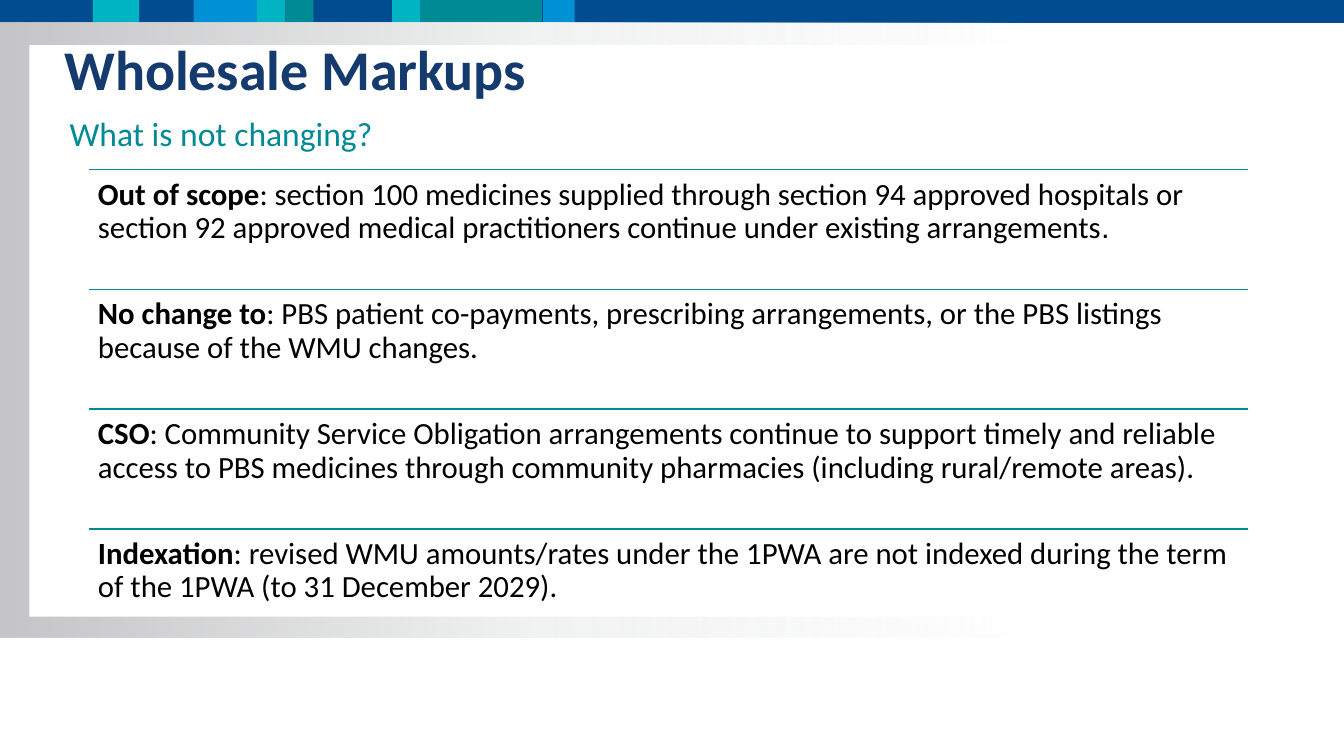
import pptx
import pptx.util
import pptx.dml.color
import pptx.enum.shapes
import pptx.enum.text
import pptx.oxml
import pptx.oxml.ns
from pptx.util import Cm, Pt

RGBColor = pptx.dml.color.RGBColor
NAVY = RGBColor(0x00, 0x4C, 0x91)
AQUA = RGBColor(0x00, 0xB4, 0xC4)
BLUE = RGBColor(0x00, 0x91, 0xD5)
GREEN = RGBColor(0x00, 0x8A, 0x96)
TEAL = RGBColor(0x00, 0x8A, 0x95)
TITLE_BLUE = RGBColor(0x15, 0x3A, 0x6E)
GREY = RGBColor(0xC4, 0xC4, 0xC6)
PALE = RGBColor(0xF1, 0xF2, 0xF2)
WHITE = RGBColor(0xFF, 0xFF, 0xFF)
BLACK = RGBColor(0x00, 0x00, 0x00)

TITLE = "Wholesale Markups"
QUESTION = "What is not changing?"
SECTIONS = [
    [("Out of scope", True, "Calibri"),
     (": section 100 medicines supplied through section 94 approved hospitals or "
      "section 92 approved medical practitioners continue under existing arrangements",
      False, "Calibri"),
     (".", False, "Arial")],
    [("No change to", True, "Calibri"),
     (": PBS patient co-payments, prescribing arrangements, or the PBS listings "
      "because of the WMU changes.", False, "Calibri")],
    [("CSO", True, "Calibri"),
     (": Community Service Obligation arrangements continue to support timely and reliable "
      "access to PBS medicines through community pharmacies (including rural/remote areas).",
      False, "Calibri")],
    [("Indexation", True, "Calibri"),
     (": revised WMU amounts/rates under the 1PWA are not indexed during the term "
      "of the 1PWA (to 31 December 2029).", False, "Calibri")],
]
SLIDE_WIDTH, SLIDE_HEIGHT = 33.87, 19.05
BAND_HEIGHT = 0.58
BAND = [
    (0, SLIDE_WIDTH, NAVY), (2.34, 1.17, AQUA), (4.88, 1.63, BLUE),
    (6.48, 0.71, AQUA), (7.19, 0.71, GREEN), (9.88, 0.71, AQUA),
    (10.59, 3.07, GREEN), (13.69, 0.79, BLUE),
]
FADE_STOPS = [(0, GREY, 100), (52, PALE, 100), (100, PALE, 0)]
SECTION_LEFT, SECTION_TOP = 2.24, 4.27
SECTION_WIDTH, SECTION_HEIGHT = 29.21, 3.02
SECTION_INSET = Cm(0.23)


def add_block(slide, left, top, width, height, color):
    shape = slide.shapes.add_shape(pptx.enum.shapes.MSO_SHAPE.RECTANGLE,
                                   Cm(left), Cm(top), Cm(width), Cm(height))
    shape.shadow.inherit = False
    shape.fill.solid()
    shape.fill.fore_color.rgb = color
    shape.line.fill.background()
    return shape


def fade(shape):
    shape.fill.gradient()
    shape.fill.gradient_angle = 0
    stop_list = next(shape.element.iter(pptx.oxml.ns.qn("a:gsLst")))
    for stop in list(stop_list):
        stop_list.remove(stop)
    for position, color, opacity in FADE_STOPS:
        stop_list.append(pptx.oxml.parse_xml(
            f'<a:gs {pptx.oxml.ns.nsdecls("a")} pos="{position * 1000}">'
            f'<a:srgbClr val="{color}"><a:alpha val="{opacity * 1000}"/></a:srgbClr></a:gs>'))


def add_run(paragraph, text, size, color, bold=False, font="Calibri"):
    run = paragraph.add_run()
    run.text = text
    run.font.name = font
    run.font.size = Pt(size)
    run.font.bold = bold
    run.font.color.rgb = color


def place(slide, placeholder, left, top, width, height, anchor):
    slide.shapes.element.append(placeholder.element)
    placeholder.left, placeholder.top = Cm(left), Cm(top)
    placeholder.width, placeholder.height = Cm(width), Cm(height)
    frame = placeholder.text_frame
    frame.word_wrap = True
    frame.auto_size = pptx.enum.text.MSO_AUTO_SIZE.NONE
    frame.vertical_anchor = anchor
    paragraph = frame.paragraphs[0]
    paragraph.alignment = pptx.enum.text.PP_ALIGN.LEFT
    paragraph.space_before = Pt(0)
    return paragraph


def add_section(slide, top, runs):
    rule = slide.shapes.add_connector(
        pptx.enum.shapes.MSO_CONNECTOR.STRAIGHT, Cm(SECTION_LEFT), Cm(top),
        Cm(SECTION_LEFT + SECTION_WIDTH), Cm(top))
    rule.line.color.rgb = TEAL
    rule.line.width = Pt(1)
    rule.element.spPr.append(pptx.oxml.parse_xml(
        f'<a:effectLst {pptx.oxml.ns.nsdecls("a")}/>'))
    box = slide.shapes.add_textbox(Cm(SECTION_LEFT), Cm(top),
                                   Cm(SECTION_WIDTH), Cm(SECTION_HEIGHT))
    frame = box.text_frame
    frame.word_wrap = True
    frame.margin_left = frame.margin_right = SECTION_INSET
    frame.margin_top = frame.margin_bottom = SECTION_INSET
    paragraph = frame.paragraphs[0]
    paragraph.line_spacing = 0.9
    for text, bold, font in runs:
        add_run(paragraph, text, 22, BLACK, bold, font)


def main():
    presentation = pptx.Presentation()
    presentation.slide_width = Cm(SLIDE_WIDTH)
    presentation.slide_height = Cm(SLIDE_HEIGHT)
    slide = presentation.slides.add_slide(presentation.slide_layouts[1])

    for left, width, color in BAND:
        add_block(slide, left, 0, width, BAND_HEIGHT, color)
    fade(add_block(slide, 0, BAND_HEIGHT, 25.98, 15.49, GREY))
    add_block(slide, 0.74, 1.14, 30.76, 14.4, WHITE)

    anchors = pptx.enum.text.MSO_ANCHOR
    heading = place(slide, slide.shapes.title, 1.37, 0.74, 27.61, 1.96, anchors.MIDDLE)
    add_run(heading, TITLE, 40, TITLE_BLUE, True)

    question = place(slide, slide.placeholders[1], 1.5, 2.82, 29.21, 3.05, anchors.TOP)
    question.line_spacing = 0.9
    properties = question._p.get_or_add_pPr()
    properties.set("marL", "0")
    properties.set("indent", "0")
    properties.append(pptx.oxml.parse_xml(f'<a:buNone {pptx.oxml.ns.nsdecls("a")}/>'))
    add_run(question, QUESTION, 24, TEAL)

    for index, runs in enumerate(SECTIONS):
        add_section(slide, SECTION_TOP + index * SECTION_HEIGHT, runs)

    presentation.save("out.pptx")


if __name__ == "__main__":
    main()
